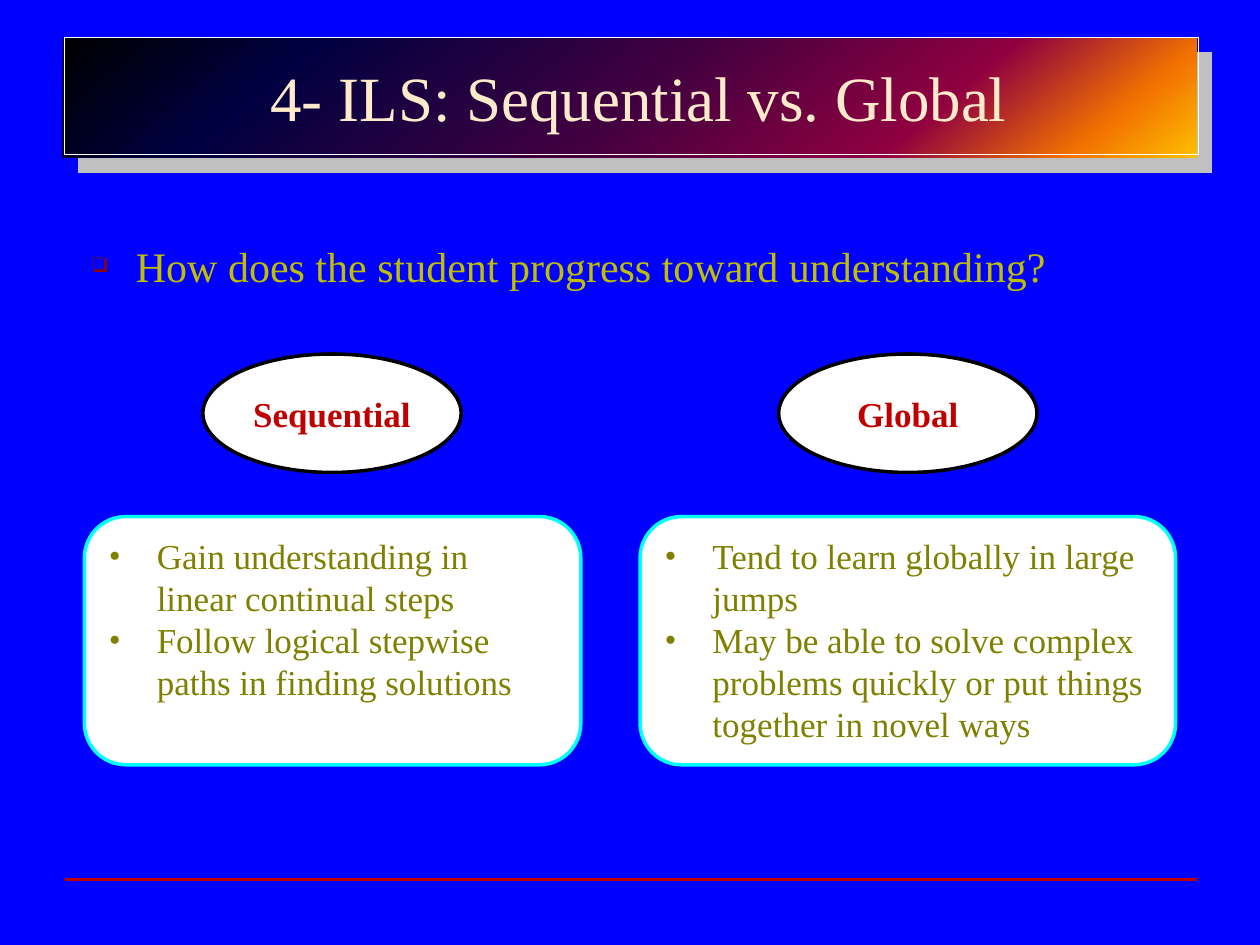
from dataclasses import dataclass

from lxml.etree import SubElement
from pptx import Presentation
from pptx.dml.color import RGBColor
from pptx.enum.shapes import MSO_CONNECTOR, MSO_SHAPE
from pptx.enum.text import MSO_ANCHOR, PP_ALIGN
from pptx.oxml import parse_xml
from pptx.oxml.ns import nsdecls, qn
from pptx.slide import Slide
from pptx.util import Inches, Pt

WIDTH, HEIGHT = 10, 7.5
BANNER_STOPS = [(0, "000000"), (20, "000040"), (50, "400040"),
                (75, "8F0040"), (90, "F27300"), (100, "FFBF00")]
COLUMNS = [
    (1.61, "Sequential", 0.67, 3.94,
     ["Gain understanding in linear continual steps",
      "Follow logical stepwise paths in finding solutions"]),
    (6.18, "Global", 5.08, 4.25,
     ["Tend to learn globally in large jumps",
      "May be able to solve complex problems quickly or put things together in novel ways"]),
]


def color(value):
    """Turn a hex string into a colour."""
    return RGBColor.from_string(value)


@dataclass
class SlideBuilder:
    """Hold the slide and its style, and add each kind of element."""
    slide: Slide
    font: str = "Times New Roman"
    background: str = "0000FF"
    paper: str = "FFFFFF"
    accent: str = "C00000"

    def paint_background(self):
        """Fill the slide background."""
        fill = self.slide.background.fill
        fill.solid()
        fill.fore_color.rgb = color(self.background)

    def shape(self, kind, box, fill, line=None):
        """Add a preset shape with a plain fill and an optional outline."""
        shape = self.slide.shapes.add_shape(kind, *map(Inches, box))
        shape.shadow.inherit = False
        shape.fill.solid()
        shape.fill.fore_color.rgb = color(fill)
        if line:
            shape.line.color.rgb = color(line)
            shape.line.width = Pt(2)
        else:
            shape.line.fill.background()
        return shape

    def add_text(self, paragraph, text, size, ink, bold=False, align=PP_ALIGN.LEFT):
        """Add one styled run to a paragraph."""
        paragraph.alignment = align
        run = paragraph.add_run()
        run.text = text
        run.font.name = self.font
        run.font.size = Pt(size)
        run.font.bold = bold
        run.font.color.rgb = color(ink)

    def bullet(self, paragraph, character, margin, hanging, share, ink):
        """Give a paragraph a hanging bullet."""
        properties = paragraph._p.get_or_add_pPr()
        properties.set("marL", str(Inches(margin)))
        properties.set("indent", str(-Inches(hanging)))
        bullet_color = SubElement(properties, qn("a:buClr"))
        SubElement(bullet_color, qn("a:srgbClr"), val=ink)
        SubElement(properties, qn("a:buSzPct"), val=str(share * 1000))
        SubElement(properties, qn("a:buFont"), typeface=self.font)
        SubElement(properties, qn("a:buChar"), char=character)

    def banner(self, box):
        """Add the gradient bar with its solid offset shadow."""
        shape = self.shape(MSO_SHAPE.RECTANGLE, box, self.background)
        stops = "".join(f'<a:gs pos="{place * 1000}"><a:srgbClr val="{value}"/></a:gs>'
                        for place, value in BANNER_STOPS)
        gradient = parse_xml(f'<a:gradFill {nsdecls("a")}><a:gsLst>{stops}</a:gsLst>'
                             '<a:lin ang="3000000" scaled="0"/></a:gradFill>')
        properties = shape.element.spPr
        properties.replace(properties.find(qn("a:solidFill")), gradient)
        shadow = SubElement(properties.find(qn("a:effectLst")), qn("a:outerShdw"),
                            dist=str(Pt(12.2)), dir="2700000", algn="ctr", rotWithShape="0")
        SubElement(shadow, qn("a:srgbClr"), val="C0C0C0")

    def title(self, text, box):
        """Place the title in front of the banner and format it."""
        title = self.slide.shapes.title
        title.element.getparent().append(title.element)
        title.left, title.top, title.width, title.height = map(Inches, box)
        title.line.color.rgb = color(self.paper)
        title.line.width = Pt(0.5)
        frame = title.text_frame
        frame.word_wrap = False
        frame.vertical_anchor = MSO_ANCHOR.MIDDLE
        paragraph = frame.paragraphs[0]
        self.add_text(paragraph, text, 36, "FFEBCC", align=PP_ALIGN.CENTER)
        paragraph._p.get_or_add_pPr().set("marL", str(Inches(0.12)))

    def question(self, text, box):
        """Add the leading question with its box bullet."""
        text_box = self.slide.shapes.add_textbox(*map(Inches, box))
        text_box.text_frame.word_wrap = True
        paragraph = text_box.text_frame.paragraphs[0]
        paragraph.space_before = Pt(4.8)
        self.add_text(paragraph, text, 24, "BFBF00")
        self.bullet(paragraph, "❑", 0.47, 0.35, 50, "920000")

    def heading(self, text, box):
        """Add an oval column heading."""
        frame = self.shape(MSO_SHAPE.OVAL, box, self.paper, "000000").text_frame
        frame.word_wrap = False
        frame.vertical_anchor = MSO_ANCHOR.MIDDLE
        self.add_text(frame.paragraphs[0], text, 20, self.accent, True, PP_ALIGN.CENTER)

    def card(self, points, box):
        """Add a rounded card of bullet points."""
        frame = self.shape(MSO_SHAPE.FLOWCHART_ALTERNATE_PROCESS, box,
                           self.paper, "00FFFF").text_frame
        frame.word_wrap = True
        frame.vertical_anchor = MSO_ANCHOR.TOP
        for index, point in enumerate(points):
            paragraph = frame.add_paragraph() if index else frame.paragraphs[0]
            self.add_text(paragraph, point, 20, "7F8000")
            self.bullet(paragraph, "•", 0.38, 0.38, 97, "7F8000")

    def rule(self, left, right, top):
        """Add the horizontal rule at the foot."""
        line = self.slide.shapes.add_connector(
            MSO_CONNECTOR.STRAIGHT, *map(Inches, (left, top, right, top)))
        line.line.color.rgb = color(self.accent)
        line.line.width = Pt(2.25)
        SubElement(line.element.spPr, qn("a:effectLst"))


def main():
    """Build and save the slide."""
    presentation = Presentation()
    presentation.slide_width, presentation.slide_height = Inches(WIDTH), Inches(HEIGHT)
    builder = SlideBuilder(presentation.slides.add_slide(presentation.slide_layouts[5]))
    builder.paint_background()
    builder.banner((0.5, 0.3, 9, 0.95))
    builder.rule(0.52, 9.5, 6.98)
    builder.title("4- ILS: Sequential vs. Global", (0.51, 0.3, 9, 0.93))
    builder.question("How does the student progress toward understanding?",
                     (0.51, 1.86, 8.98, 0.6))
    for oval_left, name, card_left, card_width, points in COLUMNS:
        builder.heading(name, (oval_left, 2.81, 2.05, 0.94))
        builder.card(points, (card_left, 4.1, card_width, 1.97))
    presentation.save("out.pptx")


if __name__ == "__main__":
    main()
